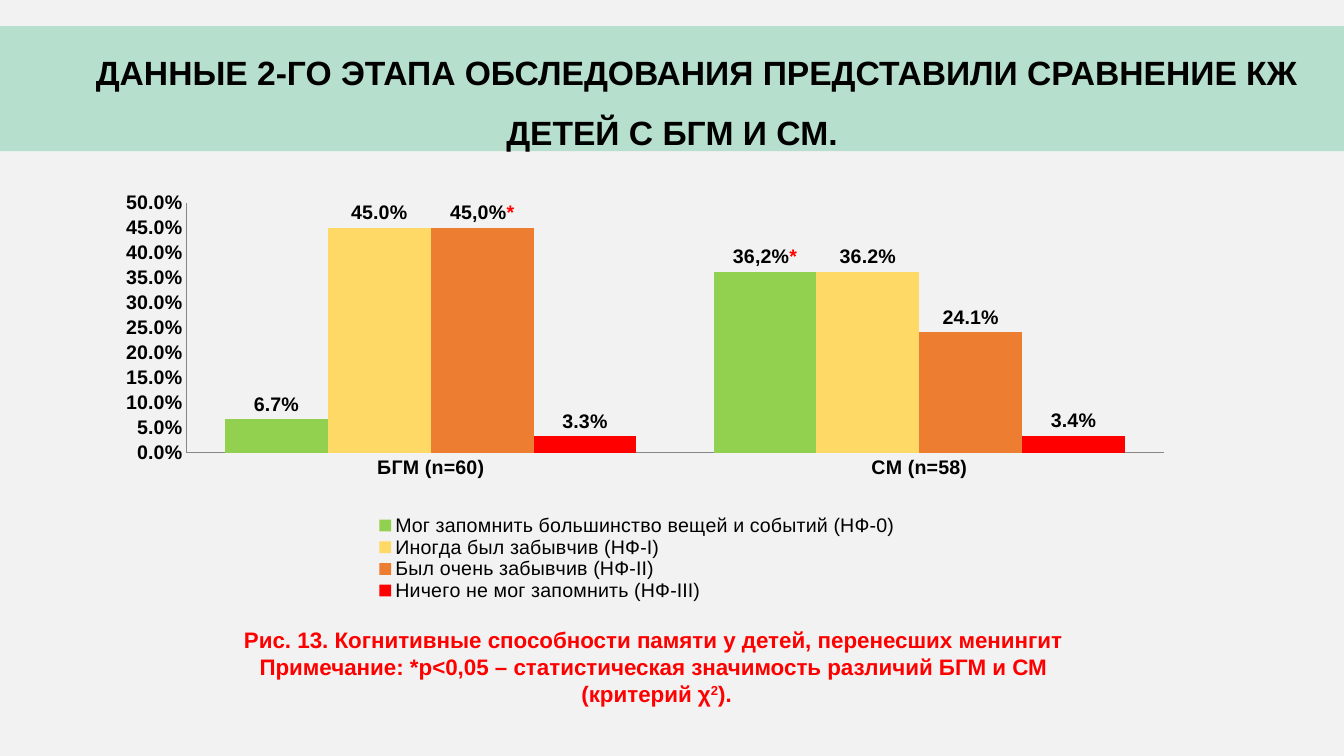
from dataclasses import dataclass

from lxml import etree
from pptx import Presentation
from pptx import util as u
from pptx.chart.data import CategoryChartData
from pptx.dml.color import RGBColor
from pptx.enum import chart as ch, text
from pptx.oxml.ns import qn

BACKGROUND = RGBColor(0xF2, 0xF2, 0xF2)
BAND = RGBColor(0xB6, 0xDF, 0xCD)
BLACK = RGBColor(0, 0, 0)
RED = RGBColor(0xFF, 0, 0)
AXIS_GRAY = RGBColor(0x88, 0x88, 0x88)
GREEN = RGBColor(0x92, 0xD0, 0x50)
YELLOW = RGBColor(0xFF, 0xD9, 0x66)
ORANGE = RGBColor(0xED, 0x7D, 0x31)
FONT = "Arial"
PERCENT = "0.0%"


@dataclass
class Answer:
    name: str
    values: tuple[float, float]
    color: RGBColor
    starred: int | None = None


ANSWERS = [
    Answer("Мог запомнить большинство вещей и событий (НФ-0)", (0.067, 0.362), GREEN, 1),
    Answer("Иногда был забывчив (НФ-I)", (0.45, 0.362), YELLOW),
    Answer("Был очень забывчив (НФ-II)", (0.45, 0.241), ORANGE, 0),
    Answer("Ничего не мог запомнить (НФ-III)", (0.033, 0.034), RED),
]
GROUPS = ["БГМ (n=60)", "СМ (n=58)"]
TITLE = "ДАННЫЕ 2-ГО ЭТАПА ОБСЛЕДОВАНИЯ ПРЕДСТАВИЛИ СРАВНЕНИЕ КЖ ДЕТЕЙ С БГМ И СМ."
CAPTION = [
    [("Рис. 13. Когнитивные способности памяти у детей, перенесших менингит", False)],
    [("Примечание: *p<0,05 – статистическая значимость различий БГМ и СМ", False)],
    [(" (критерий χ", False), ("2", True), (").", False)],
]


def style_font(font, size: float, color: RGBColor, bold: bool = True) -> None:
    font.name = FONT
    font.size = u.Pt(size)
    font.bold = bold
    font.color.rgb = color


def add_run(p, content: str, size: float, color: RGBColor):
    r = p.add_run()
    r.text = content
    style_font(r.font, size, color)
    return r


def center_with_indent(p, indent: u.Length) -> None:
    p.alignment = text.PP_ALIGN.CENTER
    p._p.get_or_add_pPr().set("indent", str(int(indent)))


def set_layout(parent, index: int, box: tuple[float, ...], inner: bool = False) -> None:
    for old in parent.findall(qn("c:layout")):
        parent.remove(old)
    layout = etree.Element(qn("c:layout"))
    manual = etree.SubElement(layout, qn("c:manualLayout"))
    settings = [("layoutTarget", "inner")] if inner else []
    settings += [("xMode", "edge"), ("yMode", "edge")]
    settings += zip("xywh", map(str, box))
    for tag, value in settings:
        etree.SubElement(manual, qn(f"c:{tag}")).set("val", value)
    parent.insert(index, layout)


def add_title(s) -> None:
    sp = s.shapes.title
    sp.left, sp.top, sp.width, sp.height = u.Cm(0), u.Cm(0.66), u.Cm(33.87), u.Cm(3.15)
    sp.fill.solid()
    sp.fill.fore_color.rgb = BAND
    tf = sp.text_frame
    tf.word_wrap = True
    tf.auto_size = text.MSO_AUTO_SIZE.NONE
    tf.vertical_anchor = text.MSO_ANCHOR.TOP
    p = tf.paragraphs[0]
    center_with_indent(p, u.Cm(1.24))
    p.line_spacing = 1.5
    p.space_after = u.Pt(10)
    add_run(p, TITLE, 24, BLACK)


def style_axis(axis) -> None:
    axis.has_major_gridlines = False
    axis.major_tick_mark = ch.XL_TICK_MARK.NONE
    axis.minor_tick_mark = ch.XL_TICK_MARK.NONE
    axis.format.line.color.rgb = AXIS_GRAY
    axis.format.line.width = u.Pt(0.75)
    style_font(axis.tick_labels.font, 14, BLACK)


def style_series(series, answer: Answer) -> None:
    series.format.fill.solid()
    series.format.fill.fore_color.rgb = answer.color
    series.invert_if_negative = False
    labels = series.data_labels
    labels.show_value = True
    labels.number_format = PERCENT
    labels.number_format_is_linked = False
    labels.position = ch.XL_LABEL_POSITION.OUTSIDE_END
    style_font(labels.font, 14, BLACK)
    if answer.starred is not None:
        label = series.points[answer.starred].data_label
        p = label.text_frame.paragraphs[0]
        shown = f"{answer.values[answer.starred]:.1%}".replace(".", ",")
        add_run(p, shown, 14, BLACK)
        add_run(p, "*", 14, RED)
        label.position = ch.XL_LABEL_POSITION.OUTSIDE_END


def add_memory_chart(s) -> None:
    data = CategoryChartData(number_format=PERCENT)
    data.categories = GROUPS
    for answer in ANSWERS:
        data.add_series(answer.name, answer.values)
    chart = s.shapes.add_chart(
        ch.XL_CHART_TYPE.COLUMN_CLUSTERED,
        u.Cm(2.24), u.Cm(4.8), u.Cm(27.36), u.Cm(10.36), data,
    ).chart
    chart.has_title = False
    chart.font.name = "Calibri"
    chart.font.size = u.Pt(18)
    chart.font.color.rgb = BLACK

    style_axis(chart.category_axis)
    values = chart.value_axis
    style_axis(values)
    values.minimum_scale, values.maximum_scale, values.major_unit = 0, 0.5, 0.05
    values.tick_labels.number_format = PERCENT
    values.tick_labels.number_format_is_linked = False

    plot = chart.plots[0]
    plot.gap_width = 75
    plot.overlap = 0
    plot.vary_by_categories = False
    for series, answer in zip(plot.series, ANSWERS):
        style_series(series, answer)

    chart.has_legend = True
    legend = chart.legend
    legend.position = ch.XL_LEGEND_POSITION.BOTTOM
    legend.include_in_layout = False
    style_font(legend.font, 14, BLACK, bold=False)
    set_layout(legend._element, 1, (0.26, 0.79, 0.49, 0.21))
    plot_area = chart._chartSpace.find(".//" + qn("c:plotArea"))
    set_layout(plot_area, 0, (0.09, 0.03, 0.9, 0.61), inner=True)


def add_caption(s) -> None:
    tf = s.shapes.add_textbox(u.Cm(4.62), u.Cm(15.65), u.Cm(22.56), u.Cm(2.3)).text_frame
    tf.word_wrap = True
    for i, line in enumerate(CAPTION):
        p = tf.add_paragraph() if i else tf.paragraphs[0]
        center_with_indent(p, u.Cm(1.14))
        for content, raised in line:
            r = add_run(p, content, 16, RED)
            if raised:
                r._r.get_or_add_rPr().set("baseline", "30000")


def main() -> None:
    prs = Presentation()
    prs.slide_width, prs.slide_height = u.Cm(33.87), u.Cm(19.05)
    s = prs.slides.add_slide(prs.slide_layouts.get_by_name("Title Only"))
    s.background.fill.solid()
    s.background.fill.fore_color.rgb = BACKGROUND
    add_memory_chart(s)
    add_caption(s)
    add_title(s)
    prs.save("out.pptx")


if __name__ == "__main__":
    main()
